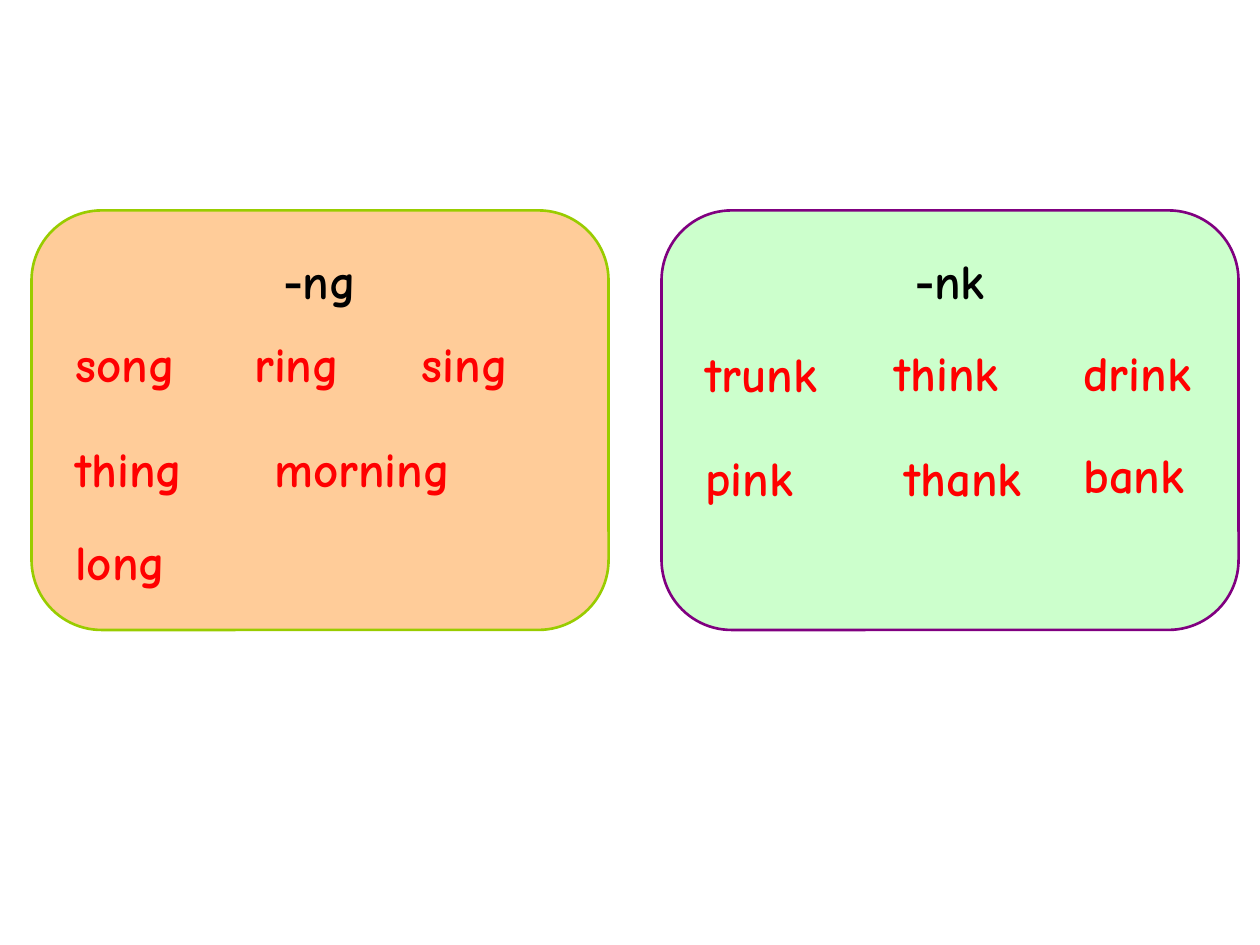
from pptx import Presentation
from pptx.dml.color import RGBColor
from pptx.enum.shapes import MSO_SHAPE
from pptx.enum.text import MSO_ANCHOR, MSO_AUTO_SIZE, PP_ALIGN
from pptx.util import Inches, Pt

ROUNDED = MSO_SHAPE.ROUNDED_RECTANGLE
TOP = MSO_ANCHOR.TOP
GROW = MSO_AUTO_SIZE.SHAPE_TO_FIT_TEXT
CENTER = PP_ALIGN.CENTER

COLORS = {
    "peach": "FFCC99",
    "lime": "99CC00",
    "mint": "CCFFCC",
    "purple": "800080",
    "heading": "000000",
    "word": "FF0000",
}
DASH_FORMAT = {"name": "Times New Roman", "size": Pt(32), "bold": True}
WORD_FORMAT = {"name": "Comic Neue", "size": Pt(28), "bold": True}

PANEL_TOP, PANEL_WIDTH, PANEL_HEIGHT = 1.67, 4.58, 3.33
WORD_HEIGHT = 0.57
PANELS = [
    {
        "left": 0.25, "ending": "ng", "fill": "peach", "line": "lime",
        "words": [
            ("song", 0.25, 0.93, 1.25),
            ("ring", 1.67, 0.93, 1.25),
            ("sing", 3, 0.93, 1.25),
            ("thing", 0.25, 1.76, 1.25),
            ("morning", 1.83, 1.76, 2.17),
            ("long", 0.25, 2.5, 1.25),
        ],
    },
    {
        "left": 5.25, "ending": "nk", "fill": "mint", "line": "purple",
        "words": [
            ("trunk", 0.25, 1.01, 1.25),
            ("think", 1.75, 1, 1.25),
            ("drink", 3.25, 1, 1.25),
            ("pink", 0.25, 1.83, 1.25),
            ("thank", 1.83, 1.83, 1.25),
            ("bank", 3.25, 1.81, 1.25),
        ],
    },
]


def color(name):
    return RGBColor.from_string(COLORS[name])


def add_run(paragraph, text, text_format, color_name):
    run = paragraph.add_run()
    run.text = text
    for attribute, value in text_format.items():
        setattr(run.font, attribute, value)
    run.font.color.rgb = color(color_name)


def add_word(slide, text, left, top, width):
    box = slide.shapes.add_textbox(
        Inches(left), Inches(top), Inches(width), Inches(WORD_HEIGHT))
    frame = box.text_frame
    frame.word_wrap = True
    frame.auto_size = GROW
    add_run(frame.paragraphs[0], text, WORD_FORMAT, "word")


def add_panel(slide, panel, left, top, width, height):
    shape = slide.shapes.add_shape(
        ROUNDED, Inches(left), Inches(top), Inches(width), Inches(height))
    shape.shadow.inherit = False
    shape.adjustments[0] = 0.167
    shape.fill.solid()
    shape.fill.fore_color.rgb = color(panel["fill"])
    shape.line.color.rgb = color(panel["line"])
    shape.line.width = Pt(1.5)

    frame = shape.text_frame
    frame.word_wrap = False
    frame.vertical_anchor = TOP
    frame.margin_top = Inches(0.1)
    heading = frame.paragraphs[0]
    heading.alignment = CENTER
    add_run(heading, "-", DASH_FORMAT, "heading")
    add_run(heading, panel["ending"], WORD_FORMAT, "heading")

    for text, offset_x, offset_y, word_width in panel["words"]:
        add_word(slide, text, left + offset_x, top + offset_y, word_width)


def main():
    presentation = Presentation()
    presentation.slide_width = Inches(10)
    presentation.slide_height = Inches(7.5)
    slide = presentation.slides.add_slide(presentation.slide_layouts[6])
    for panel in PANELS:
        add_panel(slide, panel, panel["left"], PANEL_TOP, PANEL_WIDTH, PANEL_HEIGHT)
    presentation.save("out.pptx")


if __name__ == "__main__":
    main()
